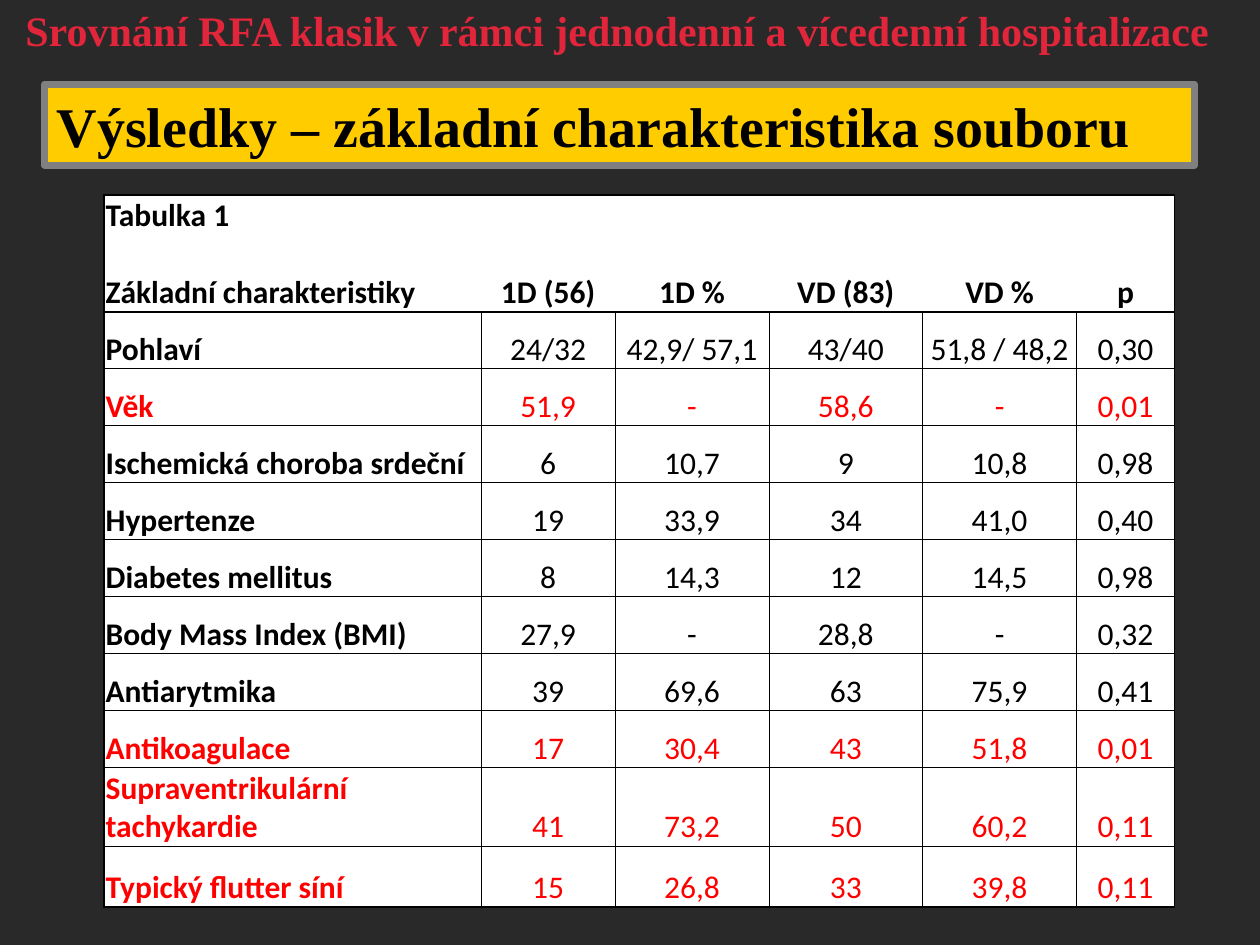
from dataclasses import dataclass

from lxml import etree
from pptx import Presentation
from pptx.dml.color import RGBColor
from pptx.enum.text import MSO_ANCHOR, MSO_AUTO_SIZE, PP_ALIGN
from pptx.oxml.ns import qn
from pptx.util import Cm, Pt

LEFT, CENTER = PP_ALIGN.LEFT, PP_ALIGN.CENTER
MIDDLE, BOTTOM = MSO_ANCHOR.MIDDLE, MSO_ANCHOR.BOTTOM
NO_FIT = MSO_AUTO_SIZE.NONE
TITLE_ONLY = 5

BLACK, WHITE, RED = "000000", "FFFFFF", "FF0000"
THICK, THIN = 1, 0.5
COLUMN_WIDTHS = (7.6, 2.7, 3.1, 3.1, 3.1, 1.98)
HEADINGS = ("1D (56)", "1D %", "VD (83)", "VD %", "p")


@dataclass(frozen=True)
class Characteristic:
    name: str
    values: tuple[str, ...]
    color: str = BLACK
    height: float = 1.15


CHARACTERISTICS = (
    Characteristic("Pohlaví", ("24/32", "42,9/ 57,1", "43/40", "51,8 / 48,2", "0,30")),
    Characteristic("Věk", ("51,9", "-", "58,6", "-", "0,01"), RED),
    Characteristic("Ischemická choroba srdeční", ("6", "10,7", "9", "10,8", "0,98")),
    Characteristic("Hypertenze", ("19", "33,9", "34", "41,0", "0,40")),
    Characteristic("Diabetes mellitus", ("8", "14,3", "12", "14,5", "0,98")),
    Characteristic("Body Mass Index (BMI)", ("27,9", "-", "28,8", "-", "0,32")),
    Characteristic("Antiarytmika", ("39", "69,6", "63", "75,9", "0,41")),
    Characteristic("Antikoagulace", ("17", "30,4", "43", "51,8", "0,01"), RED),
    Characteristic("Supraventrikulární tachykardie", ("41", "73,2", "50", "60,2", "0,11"), RED, 1.55),
    Characteristic("Typický flutter síní", ("15", "26,8", "33", "39,8", "0,11"), RED, 1.22),
)


def rgb(color: str) -> RGBColor:
    return RGBColor.from_string(color)


def write(para, text: str, *, size: float = 18, font: str = "Calibri", color: str = BLACK,
          bold: bool = True, align=LEFT, before: float = 0) -> None:
    para.alignment = align
    para.space_before = Pt(before)
    span = para.add_run()
    span.text = text
    span.font.size = Pt(size)
    span.font.name = font
    span.font.bold = bold
    span.font.color.rgb = rgb(color)


def add_border(cell, side: str, width: float) -> None:
    line = etree.SubElement(cell._tc.get_or_add_tcPr(), qn(f"a:ln{side}"), w=str(Pt(width)))
    if width:
        fill = etree.SubElement(line, qn("a:solidFill"))
        etree.SubElement(fill, qn("a:srgbClr"), val=BLACK)
    else:
        etree.SubElement(line, qn("a:noFill"))


def format_cell(cell, row: int, column: int) -> None:
    last_row, last_column = len(CHARACTERISTICS), len(HEADINGS)
    inner = THIN if row else 0
    add_border(cell, "L", inner if column else THICK)
    add_border(cell, "R", inner if column < last_column else THICK)
    add_border(cell, "T", THICK if row < 2 else THIN)
    add_border(cell, "B", THICK if row in (0, last_row) else THIN)
    cell.fill.solid()
    cell.fill.fore_color.rgb = rgb(WHITE)
    cell.vertical_anchor = BOTTOM
    cell.margin_left = cell.margin_right = cell.margin_top = Cm(0.03)
    cell.margin_bottom = 0


def add_results_table(page) -> None:
    heights = (2.32, *(item.height for item in CHARACTERISTICS))
    table = page.shapes.add_table(
        len(heights), len(COLUMN_WIDTHS), Cm(2.1), Cm(3.93),
        Cm(sum(COLUMN_WIDTHS)), Cm(sum(heights))).table
    table.first_row = table.horz_banding = False
    for column, width in zip(table.columns, COLUMN_WIDTHS):
        column.width = Cm(width)
    for row, height in enumerate(heights):
        table.rows[row].height = Cm(height)
        for column in range(len(COLUMN_WIDTHS)):
            format_cell(table.cell(row, column), row, column)

    corner = table.cell(0, 0).text_frame
    write(corner.paragraphs[0], "Tabulka 1")
    write(corner.add_paragraph(), "Základní charakteristiky", before=22)
    for column, heading in enumerate(HEADINGS, 1):
        write(table.cell(0, column).text_frame.paragraphs[0], heading, align=CENTER)
    for row, item in enumerate(CHARACTERISTICS, 1):
        write(table.cell(row, 0).text_frame.paragraphs[0], item.name, color=item.color)
        for column, value in enumerate(item.values, 1):
            write(table.cell(row, column).text_frame.paragraphs[0], value,
                  color=item.color, bold=False, align=CENTER)


def format_title(title) -> None:
    title.left, title.top, title.width, title.height = Cm(0.89), Cm(1.7), Cm(23.19), Cm(1.63)
    title.fill.solid()
    title.fill.fore_color.rgb = rgb("FFCC00")
    title.line.color.rgb = rgb("808080")
    title.line.width = Pt(4)
    frame = title.text_frame
    frame.auto_size = NO_FIT
    frame.word_wrap = True
    frame.vertical_anchor = MIDDLE
    write(frame.paragraphs[0], "Výsledky – základní charakteristika souboru",
          size=32, font="Times New Roman", before=6.4)


def add_study_name(page) -> None:
    box = page.shapes.add_textbox(0, Cm(-0.03), Cm(25.1), Cm(1.35))
    box.text_frame.word_wrap = True
    write(box.text_frame.paragraphs[0],
          "Srovnání RFA klasik v rámci jednodenní a vícedenní hospitalizace ",
          size=24, font="Times New Roman", color="E1253B", align=CENTER)


def main() -> None:
    deck = Presentation()
    deck.slide_width, deck.slide_height = Cm(25.4), Cm(19.05)
    page = deck.slides.add_slide(deck.slide_layouts[TITLE_ONLY])
    page.background.fill.solid()
    page.background.fill.fore_color.rgb = rgb("292929")
    format_title(page.shapes.title)
    add_results_table(page)
    add_study_name(page)
    deck.save("out.pptx")


if __name__ == "__main__":
    main()
